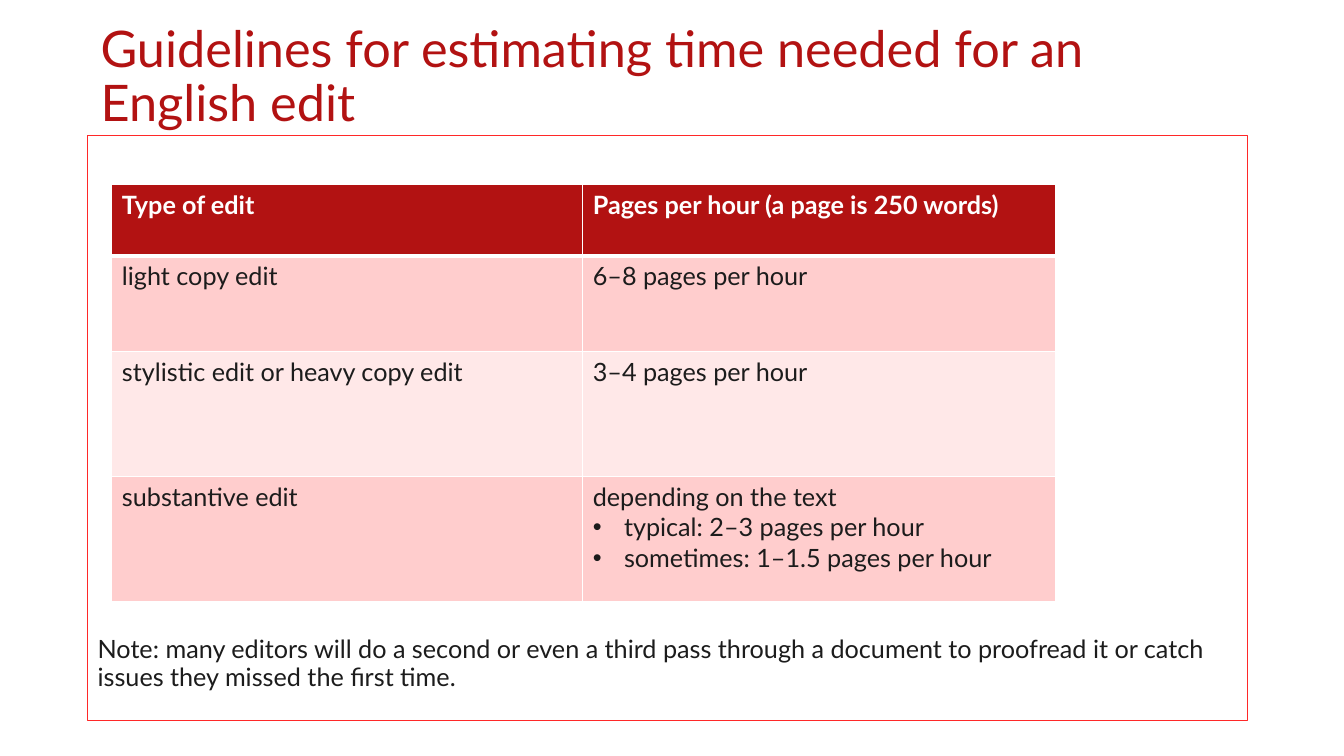
from lxml.etree import SubElement
from pptx import Presentation
from pptx.dml.color import RGBColor
from pptx.enum.shapes import MSO_SHAPE
from pptx.enum.text import MSO_ANCHOR, PP_ALIGN
from pptx.oxml.ns import qn
from pptx.util import Inches, Pt

FONT = "Lato"
RED, BRIGHT_RED, INK, WHITE = "B21212", "FF2828", "1C1C1C", "FFFFFF"
BANDS = ["FFCDCD", "FFE8E8"]
COLUMN_WIDTHS = [4.67, 4.69]
ROW_HEIGHTS = [0.71, 0.95, 1.24, 1.24]
ESTIMATES = [
    ("Type of edit", ["Pages per hour (a page is 250 words)"]),
    ("light copy edit", ["6–8 pages per hour"]),
    ("stylistic edit or heavy copy edit", ["3–4 pages per hour"]),
    ("substantive edit", [
        "depending on the text",
        "typical: 2–3 pages per hour",
        "sometimes: 1–1.5 pages per hour",
    ]),
]


def color(value):
    return RGBColor.from_string(value)


def write(paragraph, text, size=18, ink=INK, bold=False, spacing=None, bullet=False):
    paragraph.alignment = PP_ALIGN.LEFT
    if spacing:
        paragraph.line_spacing = spacing
    if bullet:
        properties = paragraph._p.get_or_add_pPr()
        properties.set("marL", str(Inches(0.31)))
        properties.set("indent", str(Inches(-0.31)))
        SubElement(properties, qn("a:buFont"), typeface="Arial")
        SubElement(properties, qn("a:buChar"), char="•")
    run = paragraph.add_run()
    run.text = text
    run.font.name = FONT
    run.font.size = Pt(size)
    run.font.bold = bold
    run.font.color.rgb = color(ink)


def add_title(slide, text):
    title = slide.shapes.add_textbox(Inches(0.9), Inches(0.31), Inches(11.5), Inches(0.93))
    title.text_frame.word_wrap = True
    title.text_frame.vertical_anchor = MSO_ANCHOR.MIDDLE
    write(title.text_frame.paragraphs[0], text, size=36, ink=RED, spacing=0.9)


def add_framed_note(slide, text):
    frame = slide.shapes.add_shape(
        MSO_SHAPE.RECTANGLE, Inches(0.87), Inches(1.34), Inches(11.5), Inches(5.81))
    frame.shadow.inherit = False
    frame.fill.background()
    frame.line.color.rgb = color(BRIGHT_RED)
    frame.line.width = Pt(0.75)
    note = frame.text_frame
    note.word_wrap = True
    note.vertical_anchor = MSO_ANCHOR.BOTTOM
    note.margin_bottom = Inches(0.29)
    write(note.paragraphs[0], text, spacing=0.9)


def set_borders(cell, top, bottom):
    properties = cell._tc.get_or_add_tcPr()
    for side, width in (("L", 1), ("R", 1), ("T", top), ("B", bottom)):
        border = SubElement(properties, qn(f"a:ln{side}"), w=str(Pt(width)))
        SubElement(SubElement(border, qn("a:solidFill")), qn("a:srgbClr"), val=WHITE)


def fill_cell(cell, lines, row):
    header = row == 0
    set_borders(cell, top=3 if row == 1 else 1, bottom=3 if header else 1)
    cell.fill.solid()
    cell.fill.fore_color.rgb = color(RED if header else BANDS[(row - 1) % 2])
    for index, line in enumerate(lines):
        paragraphs = cell.text_frame
        paragraph = paragraphs.add_paragraph() if index else paragraphs.paragraphs[0]
        write(paragraph, line, ink=WHITE if header else INK, bold=header, bullet=index > 0)


def add_estimates(slide):
    table = slide.shapes.add_table(
        len(ROW_HEIGHTS), len(COLUMN_WIDTHS), Inches(1.11), Inches(1.83),
        Inches(sum(COLUMN_WIDTHS)), Inches(sum(ROW_HEIGHTS))).table
    for column, width in zip(table.columns, COLUMN_WIDTHS):
        column.width = Inches(width)
    for row, (edit, pace) in enumerate(ESTIMATES):
        table.rows[row].height = Inches(ROW_HEIGHTS[row])
        fill_cell(table.cell(row, 0), [edit], row)
        fill_cell(table.cell(row, 1), pace, row)


def main():
    presentation = Presentation()
    presentation.slide_width = Inches(13.33)
    presentation.slide_height = Inches(7.5)
    slide = presentation.slides.add_slide(presentation.slide_layouts[6])
    add_title(slide, "Guidelines for estimating time needed for an English edit")
    add_framed_note(
        slide,
        "Note: many editors will do a second or even a third pass through a document "
        "to proofread it or catch issues they missed the first time.")
    add_estimates(slide)
    presentation.save("out.pptx")


if __name__ == "__main__":
    main()
